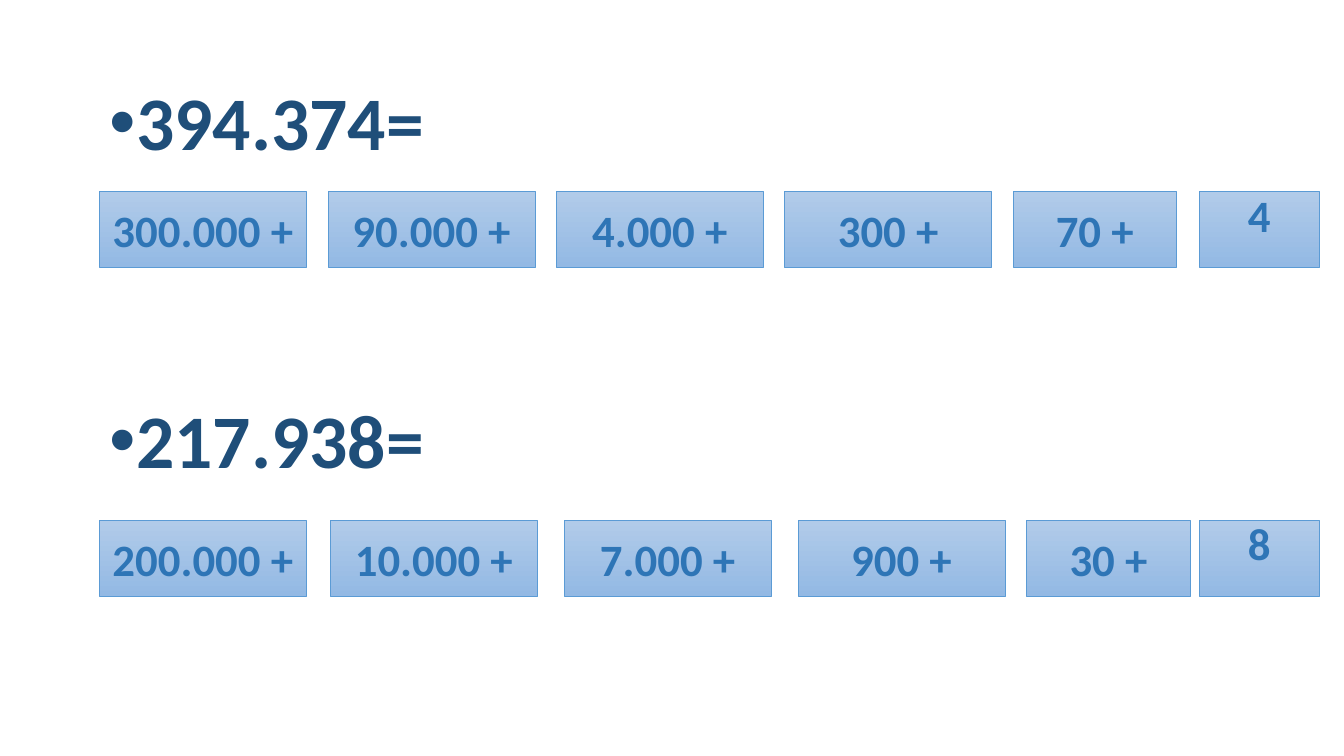
from pptx import Presentation
from pptx.dml.color import RGBColor
from pptx.enum.shapes import MSO_SHAPE
from pptx.enum.text import MSO_ANCHOR, MSO_AUTO_SIZE, PP_ALIGN
from pptx.oxml.ns import qn
from pptx.util import Pt

RECTANGLE = MSO_SHAPE.RECTANGLE
TOP, MIDDLE = MSO_ANCHOR.TOP, MSO_ANCHOR.MIDDLE
NO_AUTOFIT = MSO_AUTO_SIZE.NONE
LEFT, CENTER = PP_ALIGN.LEFT, PP_ALIGN.CENTER

NAVY = RGBColor(0x1F, 0x4E, 0x79)
BLUE = RGBColor(0x2E, 0x75, 0xB6)
OUTLINE = RGBColor(0x5B, 0x9B, 0xD5)
GRADIENT = (RGBColor(0xB1, 0xCB, 0xE9), RGBColor(0x93, 0xB9, 0xE4))

NUMBERS = ("394.374=", "217.938=")
NUMBER_GAP = 169
ADDEND_WIDTHS = (147.9, 147.9, 147.9, 147.9, 116.8, 85.3)
UNIT_RAISE = 22
# Top, left edges and addends of each decomposition
DECOMPOSITIONS = (
    (137, (71, 234.3, 397.4, 560.5, 723.6, 856.8),
     ("300.000 +", "90.000 +", "4.000 +", "300 +", "70 +", "4")),
    (371.9, (71, 236, 403, 570, 733.4, 856.8),
     ("200.000 +", "10.000 +", "7.000 +", "900 +", "30 +", "8")),
)


def apply_format(target, values):
    for name, value in values.items():
        setattr(target, name, value)


class NumberSlide:
    font_name = "Calibri"

    def __init__(self, slide):
        self.slide = slide

    def style_font(self, paragraph, size, color):
        apply_format(paragraph.font, {
            "name": self.font_name, "size": Pt(size), "bold": True})
        paragraph.font.color.rgb = color

    def add_numbers(self, numbers):
        """Fill the body placeholder with one bulleted number per decomposition."""
        body = self.slide.placeholders[1]
        apply_format(body, {"left": Pt(71.3), "top": Pt(57),
                            "width": Pt(828), "height": Pt(432.7)})
        frame = body.text_frame
        apply_format(frame, {"auto_size": NO_AUTOFIT, "vertical_anchor": TOP,
                             "word_wrap": True})
        frame.text = "\n".join(numbers)
        for index, paragraph in enumerate(frame.paragraphs):
            properties = paragraph._p.get_or_add_pPr()
            properties.set("marL", str(Pt(18)))
            properties.set("indent", str(Pt(-18)))
            for tag, key, value in (("a:buFont", "typeface", "Arial"),
                                    ("a:buChar", "char", "•")):
                properties.append(properties.makeelement(qn(tag), {key: value}))
            apply_format(paragraph, {"alignment": LEFT, "line_spacing": 0.9,
                                     "space_before": Pt(index * NUMBER_GAP)})
            self.style_font(paragraph, 54, NAVY)

    def add_addend(self, text, left, top, width, raise_by=0):
        box = self.slide.shapes.add_shape(
            RECTANGLE, Pt(left), Pt(top), Pt(width), Pt(54))
        box.shadow.inherit = False
        box.fill.gradient()
        box.fill.gradient_angle = 270
        for stop, color in zip(box.fill.gradient_stops, GRADIENT):
            stop.color.rgb = color
        box.line.color.rgb = OUTLINE
        box.line.width = Pt(0.5)
        frame = box.text_frame
        apply_format(frame, {"word_wrap": True, "vertical_anchor": MIDDLE,
                             "margin_bottom": Pt(3.6 + raise_by)})
        frame.text = text
        paragraph = frame.paragraphs[0]
        paragraph.alignment = CENTER
        self.style_font(paragraph, 32, BLUE)


def main():
    deck = Presentation()
    apply_format(deck, {"slide_width": Pt(960), "slide_height": Pt(540)})
    slide = deck.slides.add_slide(deck.slide_layouts[1])
    heading = slide.shapes.title.element
    heading.getparent().remove(heading)

    page = NumberSlide(slide)
    page.add_numbers(NUMBERS)
    for top, lefts, addends in DECOMPOSITIONS:
        for text, left, width in zip(addends, lefts, ADDEND_WIDTHS):
            raise_by = 0 if text.endswith("+") else UNIT_RAISE
            page.add_addend(text, left, top, width, raise_by)
    deck.save("out.pptx")


if __name__ == "__main__":
    main()
